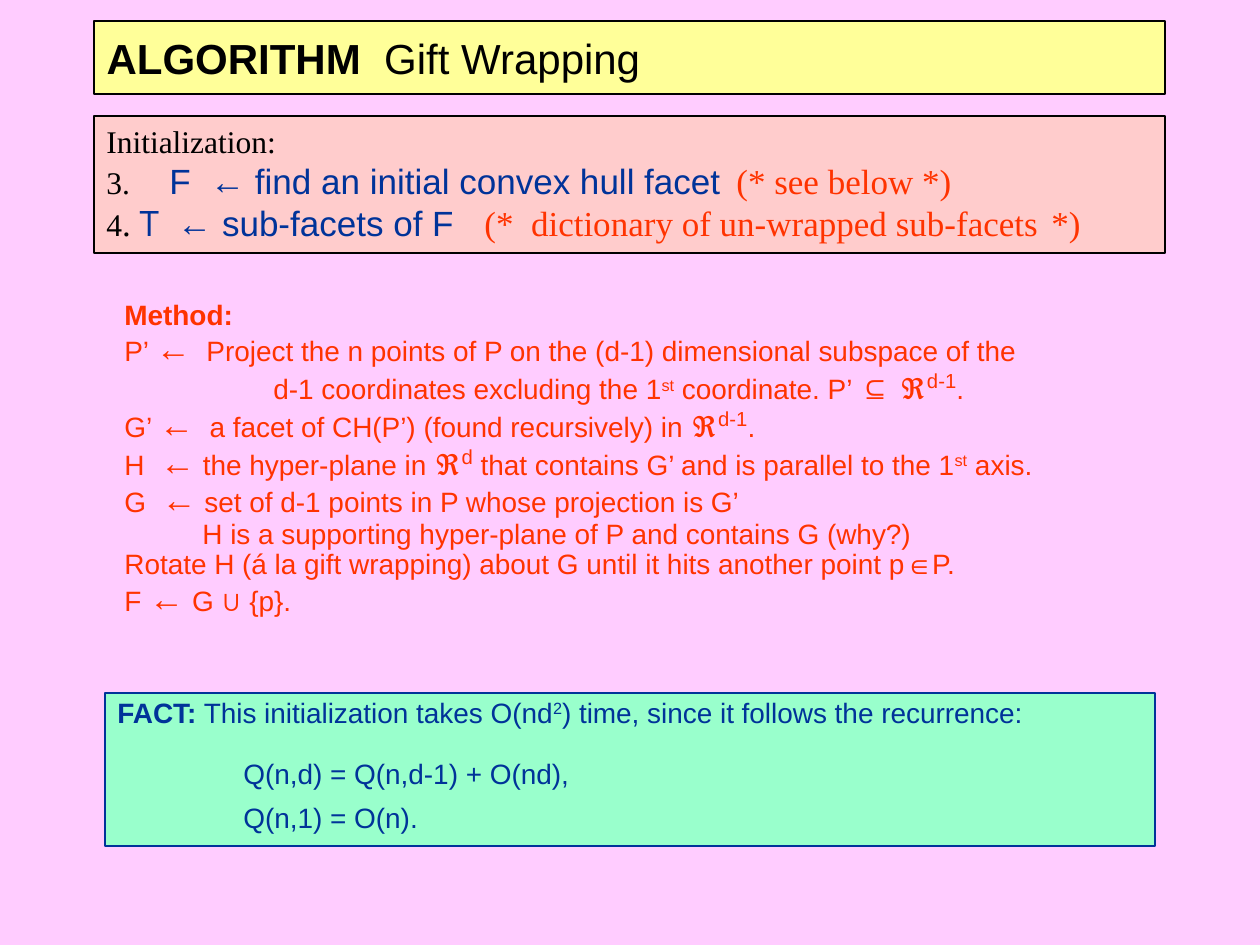
from lxml.etree import SubElement
from pptx import Presentation
from pptx.dml.color import RGBColor
from pptx.enum.shapes import MSO_SHAPE
from pptx.enum.text import MSO_ANCHOR, PP_ALIGN
from pptx.oxml.ns import qn
from pptx.util import Pt

EMU_PER_PX = 914400 / 126
BLACK = RGBColor(0x00, 0x00, 0x00)
BLUE = RGBColor(0x00, 0x33, 0x99)
RED = RGBColor(0xFF, 0x33, 0x00)
PINK = RGBColor(0xFF, 0xCC, 0xFF)
SALMON = RGBColor(0xFF, 0xCC, 0xCC)
YELLOW = RGBColor(0xFF, 0xFF, 0x99)
MINT = RGBColor(0x99, 0xFF, 0xCC)
SANS, SERIF, OPEN = "Arial", "Times New Roman", "Open Sans"


def px(length):
    """Turn whole pixels into EMU."""
    return round(length * EMU_PER_PX)


def write(paragraph, text, font=SANS, size=16, color=RED, bold=False, raised=False):
    """Add one formatted run to a paragraph."""
    run = paragraph.add_run()
    run.text = text
    run.font.name = font
    run.font.size = Pt(size)
    run.font.bold = bold
    run.font.color.rgb = color
    if raised:
        run._r.get_or_add_rPr().set("baseline", "30000")


class AlgorithmSlide:
    """Hold the current slide and its shared style."""

    def __init__(self, presentation):
        """Start a title-only slide on the pink background."""
        self.slide = presentation.slides.add_slide(presentation.slide_layouts[5])
        self.slide.background.fill.solid()
        self.slide.background.fill.fore_color.rgb = PINK

    def paint(self, panel, fill, line, width):
        """Give a panel its fill and outline."""
        panel.fill.solid()
        panel.fill.fore_color.rgb = fill
        panel.line.color.rgb = line
        panel.line.width = Pt(width)

    def fill_lines(self, frame, lines, spacing=1.0, **style):
        """Write lines given as (pieces, paragraph settings)."""
        frame.word_wrap = True
        for index, (pieces, layout) in enumerate(lines):
            paragraph = frame.paragraphs[0] if index == 0 else frame.add_paragraph()
            paragraph.alignment = PP_ALIGN.LEFT
            paragraph.line_spacing = spacing
            paragraph.space_before = Pt(layout.get("before", 0))
            properties = paragraph._p.get_or_add_pPr()
            properties.set("marL", str(px(layout.get("indent", 0))))
            properties.set("indent", "0")
            if "tabs" in layout:
                stops = SubElement(properties, qn("a:tabLst"))
                for stop in layout["tabs"]:
                    SubElement(stops, qn("a:tab"), pos=str(px(stop)), algn="l")
            for text, fmt in pieces:
                write(paragraph, text, **{**style, **fmt})

    def title(self, box, pieces):
        """Place and format the title placeholder."""
        heading = self.slide.shapes.title
        heading.left, heading.top, heading.width, heading.height = map(px, box)
        self.paint(heading, YELLOW, BLACK, 0.75)
        heading.text_frame.vertical_anchor = MSO_ANCHOR.MIDDLE
        self.fill_lines(heading.text_frame, [(pieces, {})], size=24, color=BLACK)

    def panel(self, box, fill, line, width, lines, **style):
        """Add a filled rectangle with text."""
        panel = self.slide.shapes.add_shape(MSO_SHAPE.RECTANGLE, *map(px, box))
        panel.shadow.inherit = False
        self.paint(panel, fill, line, width)
        panel.text_frame.vertical_anchor = MSO_ANCHOR.TOP
        self.fill_lines(panel.text_frame, lines, **style)

    def text(self, box, lines, **style):
        """Add a plain text box."""
        textbox = self.slide.shapes.add_textbox(*map(px, box))
        self.fill_lines(textbox.text_frame, lines, **style)


def main():
    """Build the gift wrapping slide."""
    presentation = Presentation()
    presentation.slide_width, presentation.slide_height = px(1260), px(945)
    page = AlgorithmSlide(presentation)

    plain, bold, raised = {}, {"bold": True}, {"raised": True}
    step = {"font": SERIF, "size": 18, "color": BLACK}
    remark = {"font": SERIF, "color": RED}
    arrow = ("←", {"size": 20})
    real_space = ("ℜ", {"size": 20})
    lower_dimension = ("d-1", {"size": 20, "raised": True})
    full_dimension = ("d", {"size": 20, "raised": True})
    ordinal = ("st", raised)

    initialization = [
        ([("Initialization:", step)], {}),
        ([("3.", step), ("\tF  ← find an initial convex hull facet", plain),
          ("\t(* see below *)", remark)], {"tabs": [41, 622]}),
        ([("4", step), (". ", {**step, "size": 20}), ("T  ", {"font": OPEN}),
          ("← sub-facets of F", plain),
          ("\t(*  dictionary of un-wrapped sub-facets\t*)", remark)],
         {"tabs": [417, 997]}),
    ]
    method = [
        ([("Method: ", bold)], {}),
        ([("P’ ", plain), arrow,
          ("  Project the n points of P on the (d-1) dimensional subspace of the", plain)], {}),
        ([("d-1 coordinates excluding the 1", plain), ordinal, (" coordinate. P’ ", plain),
          ("⊆ ", {"size": 18}), real_space, lower_dimension, (". ", plain)], {"indent": 149}),
        ([("G’ ", plain), arrow, ("  a facet of CH(P’) (found recursively) in ", plain),
          real_space, lower_dimension, (". ", plain)], {}),
        ([("H  ", plain), arrow, (" the hyper-plane in ", plain), real_space, full_dimension,
          (" that contains G’ and is parallel to the 1", plain), ordinal, (" axis.", plain)], {}),
        ([("G  ", plain), arrow, (" set of d-1 points in P whose projection is G’", plain)], {}),
        ([("H is a supporting hyper-plane of P and contains G (why?) ", plain)], {"indent": 78}),
        ([("Rotate H (á la gift wrapping) about G until it hits another point p∈P.", plain)], {}),
        ([("F ", plain), arrow, (" G ∪ {p}.", plain)], {}),
    ]
    fact = [
        ([("FACT:", bold), (" This initialization takes O(nd", plain), ("2", raised),
          (") time, since it follows the recurrence:", plain)], {}),
        ([("Q(n,d) = Q(n,d-1) + O(nd),", plain)], {"indent": 126, "before": 17.5}),
        ([("Q(n,1) = O(n).", plain)], {"indent": 126, "before": 8}),
    ]

    page.panel((94, 116, 1071, 137), SALMON, BLACK, 1.5, initialization, size=20, color=BLUE)
    page.title((94, 21, 1071, 73), [("ALGORITHM ", bold), (" Gift Wrapping", plain)])
    page.text((112, 295, 1004, 331), method, spacing=0.9)
    page.panel((105, 693, 1050, 153), MINT, BLUE, 1, fact, spacing=0.9, color=BLUE)
    presentation.save("out.pptx")


if __name__ == "__main__":
    main()
